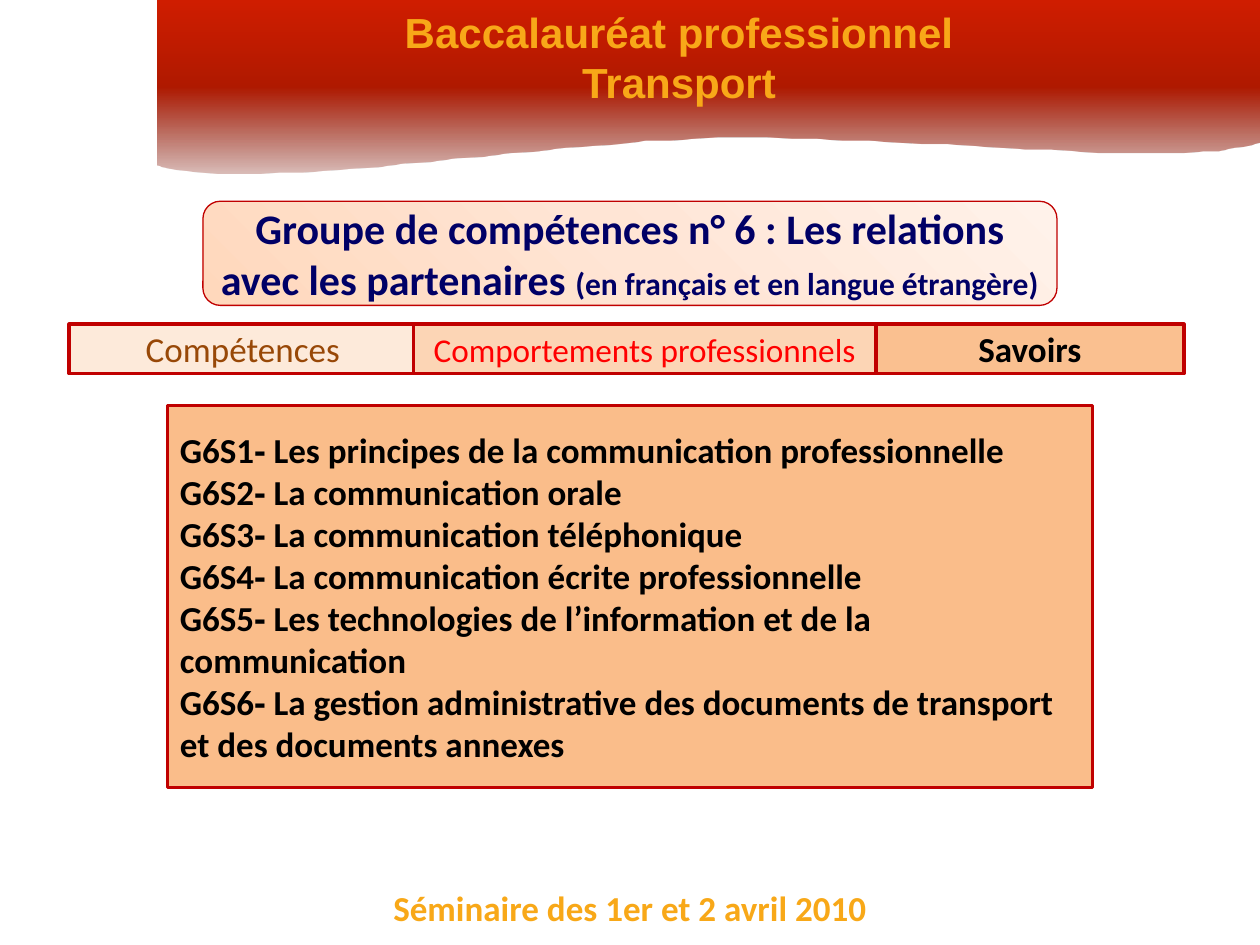
from pptx import Presentation
from pptx.dml.color import RGBColor
from pptx.enum.shapes import MSO_SHAPE
from pptx.enum.text import MSO_ANCHOR, MSO_AUTO_SIZE, PP_ALIGN
from pptx.oxml import parse_xml
from pptx.oxml.ns import nsdecls, qn
from pptx.util import Pt

ROUNDED, RECTANGLE = MSO_SHAPE.ROUNDED_RECTANGLE, MSO_SHAPE.RECTANGLE
PROCESS = MSO_SHAPE.FLOWCHART_PROCESS
TOP, MIDDLE = MSO_ANCHOR.TOP, MSO_ANCHOR.MIDDLE
LEFT, CENTER = PP_ALIGN.LEFT, PP_ALIGN.CENTER

GOLD = RGBColor(0xF8, 0xA8, 0x18)
NAVY = RGBColor(0x00, 0x00, 0x66)
BLACK = RGBColor(0x00, 0x00, 0x00)
BROWN = RGBColor(0x98, 0x48, 0x07)
RED = RGBColor(0xFF, 0x00, 0x00)
BORDER = RGBColor(0xC0, 0x00, 0x00)
PALE = RGBColor(0xFD, 0xEA, 0xDA)
PEACH = RGBColor(0xFC, 0xD5, 0xB5)
ORANGE = RGBColor(0xFA, 0xC0, 0x90)
APRICOT = RGBColor(0xFA, 0xBD, 0x8A)
# Gradient stops: position, colour, opacity (all in percent but the colour)
BANNER_STOPS = [(0, RGBColor(0x7B, 0x11, 0x00), 27),
                (50, RGBColor(0xAF, 0x19, 0x00), 100),
                (100, RGBColor(0xD0, 0x1D, 0x00), 100)]
GROUP_STOPS = [(0, RGBColor(0xFF, 0xD8, 0xBC), 100),
               (50, RGBColor(0xFF, 0xE5, 0xD5), 100),
               (100, RGBColor(0xFF, 0xF2, 0xEA), 100)]
UPWARD = '<a:lin ang="16200000" scaled="0"/>'
FROM_BOTTOM_LEFT = ('<a:path path="circle"><a:fillToRect t="100000" '
                    'r="100000"/></a:path>')


def write(frame, paragraphs, size=20, font="Calibri", color=BLACK, bold=True,
          align=CENTER, anchor=MIDDLE):
    """Fill a frame; a paragraph is a string or a list of (text, size) spans."""
    frame.word_wrap = True
    frame.auto_size = MSO_AUTO_SIZE.NONE
    frame.vertical_anchor = anchor
    for index, spans in enumerate(paragraphs):
        para = frame.add_paragraph() if index else frame.paragraphs[0]
        para.alignment = align
        if isinstance(spans, str):
            spans = [(spans, size)]
        for text, span_size in spans:
            span = para.add_run()
            span.text = text
            span.font.name = font
            span.font.size = Pt(span_size)
            span.font.bold = bold
            span.font.color.rgb = color


def curve(start, control1, control2, end, steps=24):
    """Points along a cubic Bezier curve, after its start."""
    points = []
    for step in range(1, steps + 1):
        t = step / steps
        weights = ((1 - t) ** 3, 3 * t * (1 - t) ** 2, 3 * t * t * (1 - t), t ** 3)
        corners = (start, control1, control2, end)
        points.append(tuple(sum(w * corner[axis] for w, corner in zip(weights, corners))
                            for axis in (0, 1)))
    return points


class Page:
    def __init__(self, deck):
        self.slide = deck.slides.add_slide(deck.slide_layouts[5])
        self.shapes = self.slide.shapes

    def title(self, paragraphs, left, top, width, height, **style):
        title = self.shapes.title
        title.left, title.top, title.width, title.height = map(
            Pt, (left, top, width, height))
        write(title.text_frame, paragraphs, **style)
        self.shapes.element.append(title.element)  # bring to the front

    def text(self, paragraphs, left, top, width, height, **style):
        box = self.shapes.add_textbox(*map(Pt, (left, top, width, height)))
        write(box.text_frame, paragraphs, **style)

    def box(self, kind, paragraphs, left, top, width, height, fill=None,
            line_width=2, **style):
        box = self.shapes.add_shape(kind, *map(Pt, (left, top, width, height)))
        box.shadow.inherit = False
        if fill is not None:
            box.fill.solid()
            box.fill.fore_color.rgb = fill
        box.line.color.rgb = BORDER
        box.line.width = Pt(line_width)
        write(box.text_frame, paragraphs, **style)
        return box

    def outline(self, points):
        builder = self.shapes.build_freeform(*points[0], scale=Pt(1))
        builder.add_line_segments(points[1:], close=True)
        shape = builder.convert_to_shape()
        shape.shadow.inherit = False
        shape.line.fill.background()
        return shape

    def gradient(self, shape, stops, direction):
        marks = "".join(
            f'<a:gs pos="{position * 1000}"><a:srgbClr val="{color}">'
            f'<a:alpha val="{opacity * 1000}"/></a:srgbClr></a:gs>'
            for position, color, opacity in stops)
        shape.fill.gradient()
        properties = shape.element.spPr
        properties.replace(properties.find(qn("a:gradFill")), parse_xml(
            f'<a:gradFill {nsdecls("a")} rotWithShape="1">'
            f'<a:gsLst>{marks}</a:gsLst>{direction}</a:gradFill>'))


def main():
    deck = Presentation()
    deck.slide_width, deck.slide_height = Pt(720), Pt(540)
    page = Page(deck)

    # Footer
    page.text(["Séminaire des 1er et 2 avril 2010"], 180, 503.3, 360, 31.5,
              color=GOLD, anchor=TOP)

    # Banner with a wavy lower edge
    right, crest, left = (720, 81.4), (410.4, 78.5), (90, 94.3)
    banner = page.outline(
        [(90, 0), (720, 0), right]
        + curve(right, (668.9, 96.5), (515.5, 76.3), crest)
        + curve(crest, (305.3, 80.6), (143.3, 110.2), left))
    page.gradient(banner, BANNER_STOPS, UPWARD)
    page.title(["Baccalauréat professionnel", "Transport"], 208, 0, 360, 65.5,
               size=24, font="Arial", color=GOLD, anchor=TOP)

    # Skill group
    group = page.box(
        ROUNDED,
        [[("Groupe de compétences n° 6 : Les relations avec les partenaires ", 24),
          ("(en français et en langue étrangère)", 18)]],
        116, 115, 488, 59.5, line_width=0.75, color=NAVY)
    group.text_frame.margin_left = group.text_frame.margin_right = Pt(4)
    page.gradient(group, GROUP_STOPS, FROM_BOTTOM_LEFT)

    # Knowledge list
    topics = ["Les principes de la communication professionnelle",
              "La communication orale",
              "La communication téléphonique",
              "La communication écrite professionnelle",
              "Les technologies de l’information et de la communication",
              "La gestion administrative des documents de transport "
              "et des documents annexes"]
    page.box(RECTANGLE,
             [f"G6S{number}‐ {topic}" for number, topic in enumerate(topics, 1)],
             95.75, 231.75, 528.5, 218.25, fill=APRICOT, align=LEFT)

    # Column headings
    headings = [("Savoirs", 500.5, 176, ORANGE, BLACK, 20, True),
                ("Compétences", 39.5, 198.5, PALE, BROWN, 20, False),
                ("Comportements professionnels", 236.25, 264.25, PEACH, RED, 19, False)]
    for label, start, width, fill, color, size, bold in headings:
        page.box(PROCESS, [label], start, 185.25, width, 28.25, fill=fill,
                 color=color, size=size, bold=bold)

    deck.save("out.pptx")


if __name__ == "__main__":
    main()
